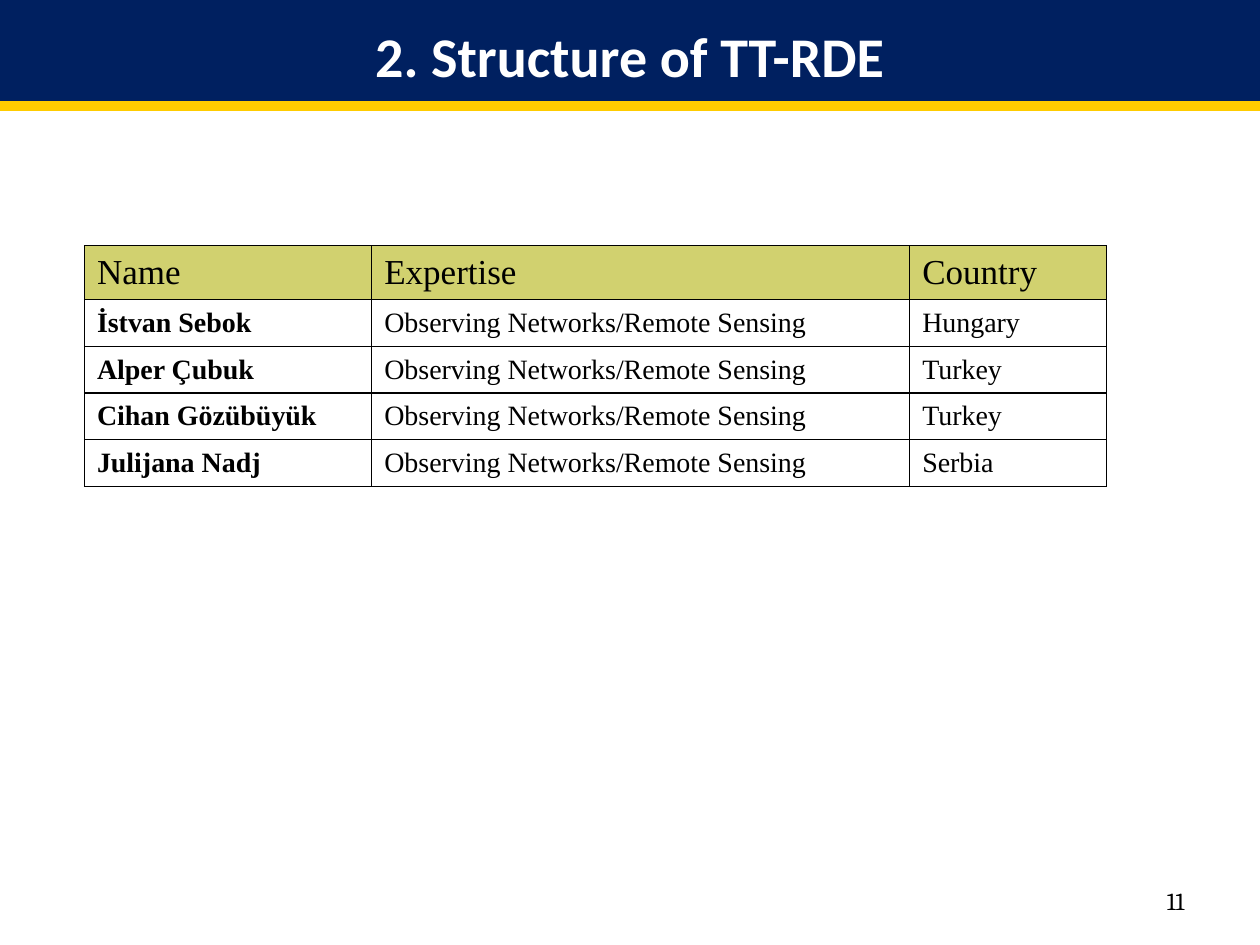
"""Build the TT-RDE structure slide with its table of members."""
from dataclasses import dataclass

import pptx
import pptx.dml.color
import pptx.enum.shapes
import pptx.enum.text
import pptx.oxml
import pptx.oxml.ns
import pptx.util
from pptx.util import Inches


@dataclass(frozen=True)
class Theme:
    navy: str = "002060"
    gold: str = "FFCC00"
    olive: str = "D1D16F"
    black: str = "000000"
    white: str = "FFFFFF"
    title_font: str = "Calibri"
    table_font: str = "Times New Roman"
    number_font: str = "Cambria"
    title_size: int = 32
    header_size: int = 20
    body_size: int = 16
    number_size: int = 14
    rule_width: float = 6
    border_width: float = 0.75


theme = Theme()
rgb = pptx.dml.color.RGBColor.from_string
PP_ALIGN = pptx.enum.text.PP_ALIGN
MIDDLE = pptx.enum.text.MSO_ANCHOR.MIDDLE


def add_run(p, text, font, size, color, bold=False):
    r = p.add_run()
    r.text = text
    r.font.name = font
    r.font.size = pptx.util.Pt(size)
    r.font.bold = bold
    r.font.color.rgb = rgb(color)


def add_borders(cell):
    tcPr = cell._tc.get_or_add_tcPr()
    width = pptx.util.Pt(theme.border_width)
    for side in ("lnL", "lnR", "lnT", "lnB"):
        tcPr.append(pptx.oxml.parse_xml(
            f'<a:{side} {pptx.oxml.ns.nsdecls("a")} w="{width}"><a:solidFill>'
            f'<a:srgbClr val="{theme.black}"/></a:solidFill></a:{side}>'))


prs = pptx.Presentation()
prs.slide_width, prs.slide_height = Inches(10), Inches(7.5)
s = prs.slides.add_slide(prs.slide_layouts[5])

title = s.shapes.title
title.left, title.top = Inches(0), Inches(0)
title.width, title.height = Inches(10), Inches(0.87)
title.fill.solid()
title.fill.fore_color.rgb = rgb(theme.navy)
tf = title.text_frame
tf.vertical_anchor = MIDDLE
p = tf.paragraphs[0]
p.alignment = PP_ALIGN.CENTER
add_run(p, "2. Structure of TT-RDE", theme.title_font, theme.title_size, theme.white, True)

rule = s.shapes.add_connector(pptx.enum.shapes.MSO_CONNECTOR.STRAIGHT,
                              Inches(0), Inches(0.84), Inches(10), Inches(0.84))
rule.line.color.rgb = rgb(theme.gold)
rule.line.width = pptx.util.Pt(theme.rule_width)
rule._element.spPr.append(
    pptx.oxml.parse_xml(f'<a:effectLst {pptx.oxml.ns.nsdecls("a")}/>'))

members = [("İstvan Sebok", "Hungary"), ("Alper Çubuk", "Turkey"),
           ("Cihan Gözübüyük", "Turkey"), ("Julijana Nadj", "Serbia")]
rows = [("Name", "Expertise", "Country")]
rows += [(name, "Observing Networks/Remote Sensing", country) for name, country in members]
col_widths = [2.28, 4.27, 1.56]

table = s.shapes.add_table(len(rows), len(col_widths), Inches(0.67), Inches(1.95),
                           Inches(sum(col_widths)), Inches(1.93)).table
table.first_row = False
table.horz_banding = False
for column, width in zip(table.columns, col_widths):
    column.width = Inches(width)

for i, row in enumerate(rows):
    header = i == 0
    table.rows[i].height = Inches(0.43 if header else 0.37)
    for j, text in enumerate(row):
        cell = table.cell(i, j)
        cell.vertical_anchor = MIDDLE
        add_borders(cell)
        if header:
            cell.fill.solid()
            cell.fill.fore_color.rgb = rgb(theme.olive)
        else:
            cell.fill.background()
        add_run(cell.text_frame.paragraphs[0], text, theme.table_font,
                theme.header_size if header else theme.body_size,
                theme.black, j == 0 and not header)

number = s.shapes.add_textbox(Inches(7.17), Inches(6.95), Inches(2.33), Inches(0.4))
tf = number.text_frame
tf.word_wrap = True
tf.vertical_anchor = MIDDLE
p = tf.paragraphs[0]
p.alignment = PP_ALIGN.RIGHT
add_run(p, "11", theme.number_font, theme.number_size, theme.black)

prs.save("out.pptx")
